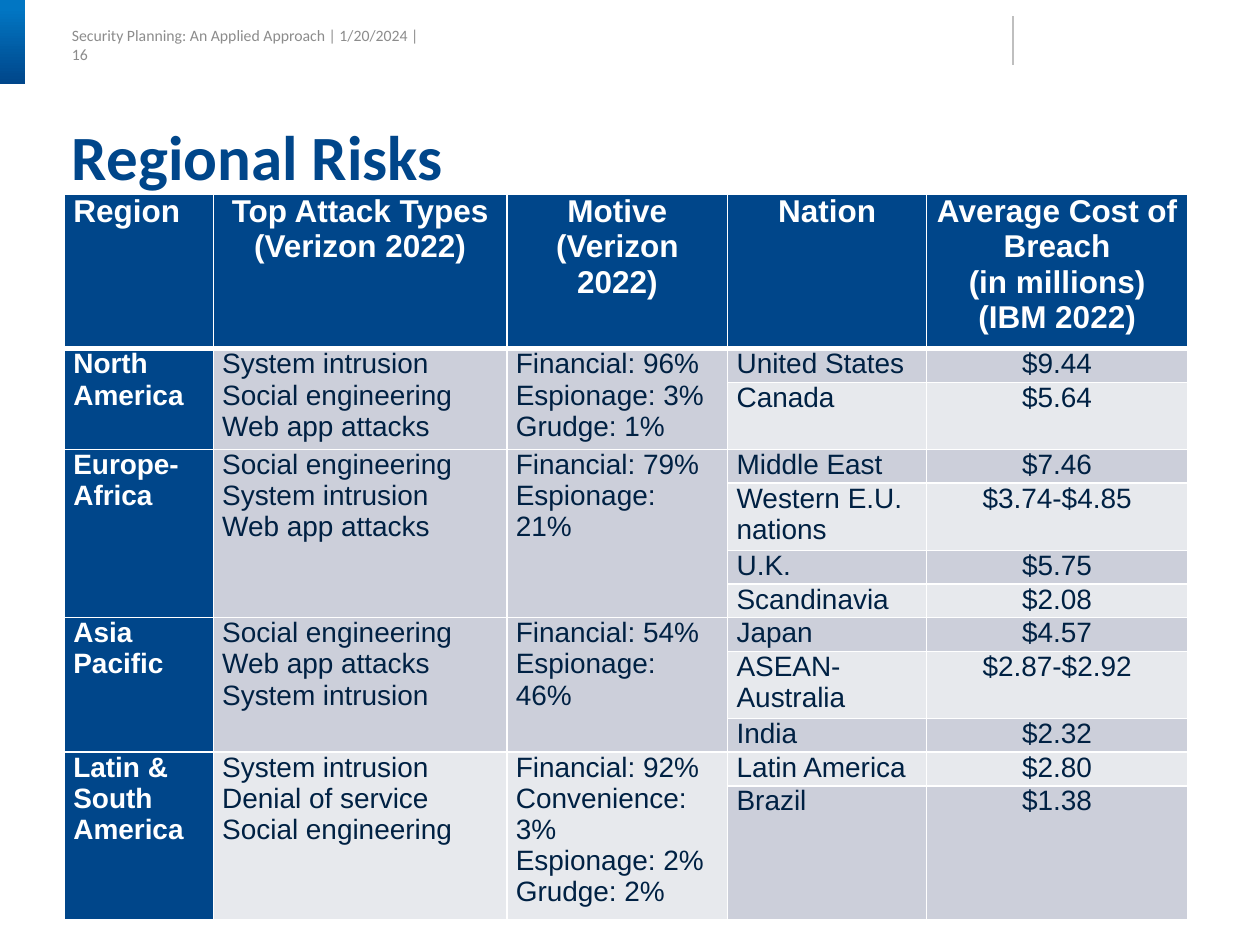
from pptx import Presentation
from pptx.dml.color import RGBColor
from pptx.enum.shapes import MSO_CONNECTOR, MSO_SHAPE
from pptx.enum.text import MSO_ANCHOR, MSO_AUTO_SIZE, PP_ALIGN
from pptx.oxml import parse_xml
from pptx.oxml.ns import nsdecls
from pptx.util import Cm, Pt

# Content
RUNNING_HEAD = "Security Planning: An Applied Approach | 1/20/2024 | 16"
TITLE = "Regional Risks"
HEADERS = [
    ["Region"],
    ["Top Attack Types", "(Verizon 2022)"],
    ["Motive", "(Verizon 2022)"],
    ["Nation"],
    ["Average Cost of Breach", "(in millions)", "(IBM 2022)"],
]
# Region, top attack types, motives, nations with their cost
REGIONS = [
    ("North America",
     ["System intrusion", "Social engineering", "Web app attacks"],
     ["Financial: 96%", "Espionage: 3%", "Grudge: 1%"],
     [("United States", "$9.44"), ("Canada", "$5.64")]),
    ("Europe-Africa",
     ["Social engineering", "System intrusion", "Web app attacks"],
     ["Financial: 79%", "Espionage: 21%"],
     [("Middle East", "$7.46"), ("Western E.U. nations", "$3.74-$4.85"),
      ("U.K.", "$5.75"), ("Scandinavia", "$2.08")]),
    ("Asia Pacific",
     ["Social engineering", "Web app attacks", "System intrusion"],
     ["Financial: 54%", "Espionage: 46%"],
     [("Japan", "$4.57"), ("ASEAN-Australia", "$2.87-$2.92"), ("India", "$2.32")]),
    ("Latin & South America",
     ["System intrusion", "Denial of service", "Social engineering"],
     ["Financial: 92%", "Convenience: 3%", "Espionage: 2%", "Grudge: 2%"],
     [("Latin America", "$2.80"), ("Brazil", "$1.38")]),
]

# Theme and measures
THEME = {
    "navy": "00468A", "blue": "0176C3", "ink": "002143", "white": "FFFFFF",
    "grey": "8C8C8C", "rule": "BFBFBF", "bands": ("E7E9ED", "CCCFDA"),
    "heading_font": "Calibri", "table_font": "Arial",
    "title_size": 36, "header_size": 18, "cell_size": 16, "small_size": 9,
}
LEFT = 1.45
COLUMN_WIDTHS = [3, 5.92, 4.45, 4.01, 5.26]
HEADER_HEIGHT, LINE_HEIGHT = 3.12, 0.62
ROW_LINES = {2: 2, 4: 2, 8: 2, 11: 3}  # body rows taller than one line
CELL_INSET = 0.18


def color(value):
    return RGBColor.from_string(value)


def add_run(paragraph, text, font_name, size, tint, bold=False):
    run = paragraph.add_run()
    run.text = text
    run.font.name = font_name
    run.font.size = Pt(size)
    run.font.bold = bold
    run.font.color.rgb = color(tint)


def clear_insets(frame):
    frame.margin_left = frame.margin_right = 0
    frame.margin_top = frame.margin_bottom = 0


def format_cell(cell, fill, bottom_width=1):
    """Set insets, white borders and fill."""
    cell.margin_left = cell.margin_right = Cm(CELL_INSET)
    cell.margin_top = cell.margin_bottom = 0
    properties = cell._tc.get_or_add_tcPr()
    for side, width in (("L", 1), ("R", 1), ("T", 1), ("B", bottom_width)):
        properties.append(parse_xml(
            f'<a:ln{side} {nsdecls("a")} w="{Pt(width)}"><a:solidFill>'
            f'<a:srgbClr val="{THEME["white"]}"/></a:solidFill></a:ln{side}>'))
    cell.fill.solid()
    cell.fill.fore_color.rgb = color(fill)


def write_cell(cell, lines, size, tint, bold=False, centered=False):
    frame = cell.text_frame
    for index, line in enumerate(lines):
        paragraph = frame.add_paragraph() if index else frame.paragraphs[0]
        paragraph.alignment = PP_ALIGN.CENTER if centered else PP_ALIGN.LEFT
        add_run(paragraph, line, THEME["table_font"], size, tint, bold)


def add_page_frame(slide):
    # Corner block
    block = slide.shapes.add_shape(
        MSO_SHAPE.ROUNDED_RECTANGLE, 0, 0, Cm(0.51), Cm(1.7))
    block.adjustments[0] = 0
    block.shadow.inherit = False
    block.line.fill.background()
    block.fill.gradient()
    block.fill.gradient_angle = 270
    stops = zip(block.fill.gradient_stops, (0.1, 1), ("blue", "navy"))
    for stop, position, name in stops:
        stop.position = position
        stop.color.rgb = color(THEME[name])

    # Header rule
    rule = slide.shapes.add_connector(
        MSO_CONNECTOR.STRAIGHT, Cm(20.42), Cm(0.33), Cm(20.42), Cm(1.32))
    rule.line.color.rgb = color(THEME["rule"])
    rule.line.width = Pt(0.75)
    rule._element.spPr.append(parse_xml(f'<a:effectLst {nsdecls("a")}/>'))

    # Running head
    box = slide.shapes.add_textbox(Cm(LEFT), Cm(0.61), Cm(7.21), Cm(0.58))
    frame = box.text_frame
    frame.word_wrap = False
    frame.vertical_anchor = MSO_ANCHOR.MIDDLE
    clear_insets(frame)
    add_run(frame.paragraphs[0], RUNNING_HEAD, THEME["heading_font"],
            THEME["small_size"], THEME["grey"])


def add_title(slide):
    title = slide.shapes.title
    title.left, title.top = Cm(LEFT), Cm(2.54)
    title.width, title.height = Cm(22.66), Cm(1.4)
    frame = title.text_frame
    frame.auto_size = MSO_AUTO_SIZE.SHAPE_TO_FIT_TEXT
    frame.vertical_anchor = MSO_ANCHOR.TOP
    clear_insets(frame)
    paragraph = frame.paragraphs[0]
    paragraph.alignment = PP_ALIGN.LEFT
    paragraph.line_spacing = 0.9
    add_run(paragraph, TITLE, THEME["heading_font"], THEME["title_size"],
            THEME["navy"], bold=True)


def add_risk_table(slide):
    row_count = 1 + sum(len(nations) for *_, nations in REGIONS)
    heights = [HEADER_HEIGHT] + [
        LINE_HEIGHT * ROW_LINES.get(row, 1) for row in range(1, row_count)]
    table = slide.shapes.add_table(
        row_count, len(HEADERS), Cm(1.3), Cm(3.91),
        Cm(sum(COLUMN_WIDTHS)), Cm(sum(heights))).table
    for column, width in zip(table.columns, COLUMN_WIDTHS):
        column.width = Cm(width)
    for row, height in zip(table.rows, heights):
        row.height = Cm(height)

    # Header row
    for index, lines in enumerate(HEADERS):
        cell = table.cell(0, index)
        format_cell(cell, THEME["navy"], bottom_width=3)
        write_cell(cell, lines, THEME["header_size"], THEME["white"],
                   bold=True, centered=index > 0)

    # Body fills: navy first column, alternating bands elsewhere
    for row in range(1, row_count):
        for column in range(len(HEADERS)):
            fill = THEME["bands"][row % 2] if column else THEME["navy"]
            format_cell(table.cell(row, column), fill)

    # Region groups
    size, ink = THEME["cell_size"], THEME["ink"]
    first = 1
    for region, attacks, motives, nations in REGIONS:
        last = first + len(nations) - 1
        for column in range(3):
            table.cell(first, column).merge(table.cell(last, column))
        write_cell(table.cell(first, 0), [region], size, THEME["white"], bold=True)
        write_cell(table.cell(first, 1), attacks, size, ink)
        write_cell(table.cell(first, 2), motives, size, ink)
        for row, (nation, cost) in enumerate(nations, first):
            write_cell(table.cell(row, 3), [nation], size, ink)
            write_cell(table.cell(row, 4), [cost], size, ink, centered=True)
        first = last + 1


def main():
    presentation = Presentation()
    presentation.slide_width, presentation.slide_height = Cm(25.4), Cm(19.05)
    slide = presentation.slides.add_slide(presentation.slide_layouts[5])
    add_page_frame(slide)
    add_title(slide)
    add_risk_table(slide)
    presentation.save("out.pptx")


if __name__ == "__main__":
    main()
